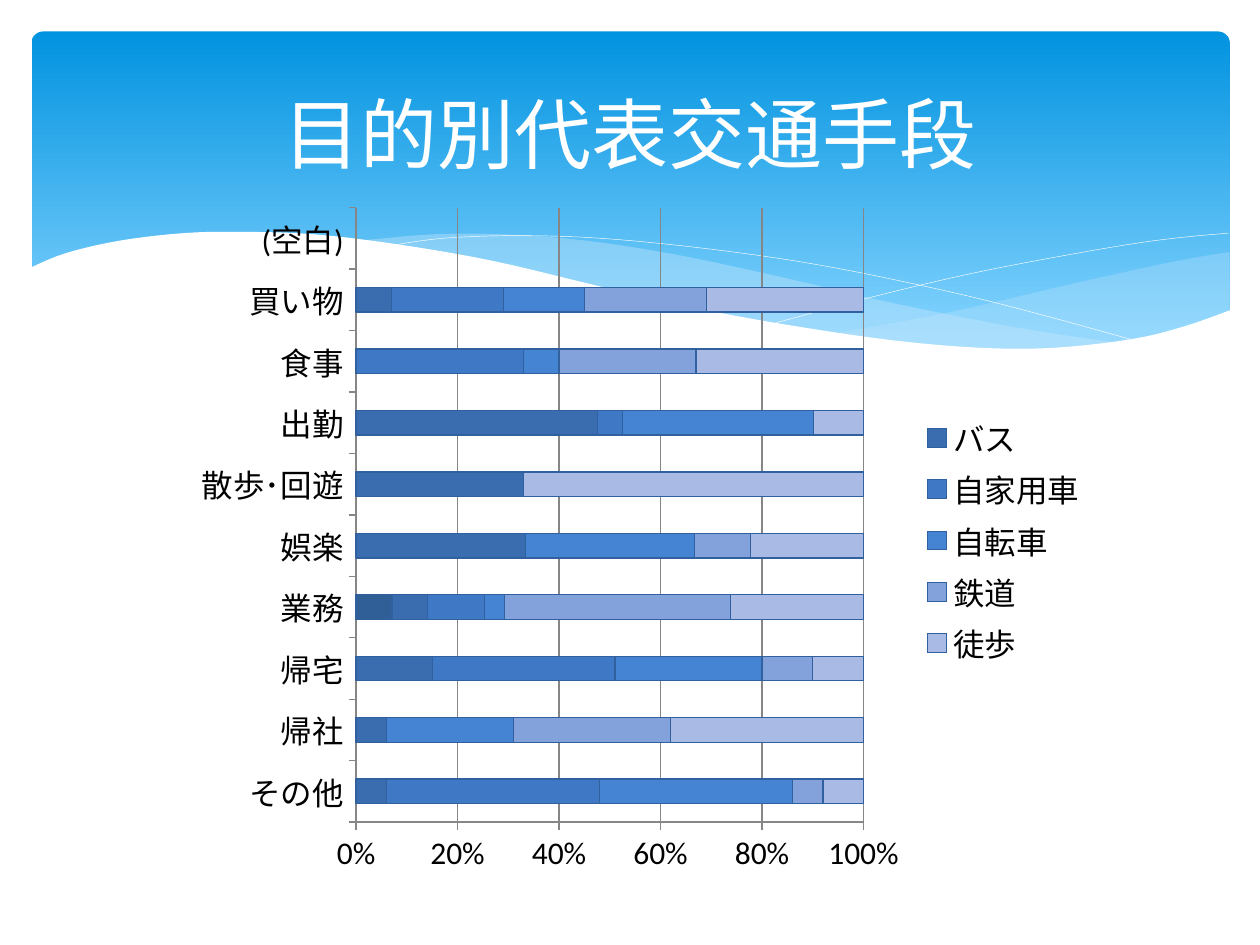
import dataclasses

import pptx
import pptx.chart.data
import pptx.dml.color
import pptx.enum.chart
import pptx.enum.dml
import pptx.enum.shapes
import pptx.enum.text
import pptx.oxml
import pptx.oxml.ns
import pptx.util
from pptx.util import Inches


@dataclasses.dataclass(frozen=True)
class Theme:
    font: str = "Calibri"
    title_size: int = 44
    chart_size: int = 18
    white: str = "FFFFFF"
    text: str = "000000"
    sky_top: str = "0293E0"
    sky_bottom: str = "83D3FE"
    swell: str = "C6E7FC"
    grid: str = "868686"
    bar_edge: str = "30619E"
    bars: tuple = ("305F98", "3A6CB0", "3F79C5", "4584D3", "83A1DA", "A9BBE4", "C8D2EC")


THEME = Theme()

WAVE_EDGE = [(0, .29), (.29, .17), (.72, .07), (1.23, .01), (1.7, 0), (2.27, .02),
             (2.93, .1), (3.68, .23), (4.52, .43), (5.32, .61), (6.03, .74),
             (6.85, .86), (7.55, .92), (8.14, .92), (8.76, .85), (9.17, .75), (9.54, .62)]
RIGHT_SWELL_TOP = [(9.53, .16), (9.12, .23), (8.38, .39), (7.3, .64), (6.38, .81)]
RIGHT_SWELL_BASE = [(6.38, .81), (6.96, .88), (7.46, .93), (8.01, .93), (8.58, .89),
                    (9.12, .78), (9.53, .63)]
LEFT_SWELL_TOP = [(8.7, .89), (7.84, .76), (6.83, .56), (6.06, .38), (5.18, .19),
                  (4.42, .07), (3.76, .02), (3.21, .02), (2.63, .07)]
LEFT_SWELL_BASE = [(2.63, .07), (3.39, .19), (4.26, .38), (5.43, .64), (6.27, .8),
                   (6.99, .9), (7.73, .94), (8.25, .93), (8.7, .89)]
FALLING_LINE = [(2.86, .11), (3.3, .05), (3.93, .03), (4.66, .06), (5.59, .16),
                (6.42, .29), (7.37, .49), (8.08, .67), (8.84, .88)]
RISING_LINE = [(5.9, .73), (6.72, .51), (7.53, .32), (8.43, .15), (9.01, .06), (9.52, .01)]

PURPOSES = ["その他", "帰社", "帰宅", "業務", "娯楽", "散歩･回遊", "出勤", "食事", "買い物", "(空白)"]
SHARES = {
    "Series 1": (None, None, None, 7, None, None, None, None, None, None),
    "バス": (6, 6, 15, 7, 33, 33, 48, None, 7, None),
    "自家用車": (42, None, 36, 11, None, None, 5, 33, 22, None),
    "自転車": (38, 25, 29, 4, 33, None, 38, 7, 16, None),
    "鉄道": (6, 31, 10, 44, 11, None, None, 27, 24, None),
    "徒歩": (8, 38, 10, 26, 22, 67, 10, 33, 31, None),
    "Series 7": (None,) * len(PURPOSES),
}
UNLISTED_SERIES = (0, 6)


def rgb(code):
    return pptx.dml.color.RGBColor.from_string(code)


def fill_solid(fill, code):
    fill.solid()
    fill.fore_color.rgb = rgb(code)


def smooth(knots, steps=5):
    ends = [knots[0], *knots, knots[-1]]
    points = [knots[0]]
    for a, b, c, d in zip(ends, ends[1:], ends[2:], ends[3:]):
        for step in range(1, steps + 1):
            t = step / steps
            points.append(tuple(
                (2 * q + (r - p) * t + (2 * p - 5 * q + 4 * r - s) * t ** 2
                 + (3 * q - p - 3 * r + s) * t ** 3) / 2
                for p, q, r, s in zip(a, b, c, d)))
    return points


def add_outline(page, box, points, closed):
    left, top = box[:2]
    places = [(left + Inches(x), top + Inches(y)) for x, y in points]
    builder = page.shapes.build_freeform(*places[0])
    builder.add_line_segments(places[1:], close=closed)
    shape = builder.convert_to_shape()
    shape.shadow.inherit = False
    return shape


def add_area(page, box, points, code, opacity=100):
    shape = add_outline(page, box, points, True)
    fill_solid(shape.fill, code)
    shape.line.fill.background()
    if opacity < 100:
        color = shape.element.spPr.find(".//" + pptx.oxml.ns.qn("a:srgbClr"))
        alpha = pptx.oxml.parse_xml(
            f'<a:alpha {pptx.oxml.ns.nsdecls("a")} val="{opacity * 1000}"/>')
        color.append(alpha)


def add_sky(page, box):
    sky = page.shapes.add_shape(pptx.enum.shapes.MSO_SHAPE.ROUNDED_RECTANGLE, *box)
    sky.adjustments[0] = 0.034
    sky.shadow.inherit = False
    sky.line.fill.background()
    sky.fill.gradient()
    sky.fill.gradient_angle = 270
    stops = ((0, THEME.sky_top), (0.9, THEME.sky_bottom))
    for stop, (position, code) in zip(sky.fill.gradient_stops, stops):
        stop.position = position
        stop.color.rgb = rgb(code)


def add_waves(page, box):
    add_area(page, box, smooth(RIGHT_SWELL_TOP) + smooth(RIGHT_SWELL_BASE), THEME.swell, 29)
    add_area(page, box, smooth(LEFT_SWELL_TOP) + smooth(LEFT_SWELL_BASE), THEME.swell, 40)
    for knots in (FALLING_LINE, RISING_LINE):
        curve = add_outline(page, box, smooth(knots), False)
        curve.fill.background()
        curve.line.color.rgb = rgb(THEME.white)
        curve.line.width = pptx.util.Pt(0.25)
    width, height = (length / Inches(1) for length in box[2:])
    add_area(page, box, smooth(WAVE_EDGE) + [(width, height), (0, height)], THEME.white)


def place_title(page, box, text):
    title = page.shapes.title
    page.shapes.element.append(title.element)
    title.left, title.top, title.width, title.height = box
    frame = title.text_frame
    frame.word_wrap = True
    frame.vertical_anchor = pptx.enum.text.MSO_ANCHOR.MIDDLE
    para = frame.paragraphs[0]
    para.alignment = pptx.enum.text.PP_ALIGN.CENTER
    span = para.add_run()
    span.text = text
    span.font.name = THEME.font
    span.font.size = pptx.util.Pt(THEME.title_size)
    span.font.color.rgb = rgb(THEME.white)


def set_layout(part, x, y, width, height, inner=False):
    target = '<c:layoutTarget val="inner"/>' if inner else ""
    sizes = "".join(f'<c:{key} val="{value}"/>'
                    for key, value in zip("xywh", (x, y, width, height)))
    layout = pptx.oxml.parse_xml(
        f'<c:layout {pptx.oxml.ns.nsdecls("c")}><c:manualLayout>{target}'
        f'<c:xMode val="edge"/><c:yMode val="edge"/>{sizes}</c:manualLayout></c:layout>')
    for old in part.findall(pptx.oxml.ns.qn("c:layout")):
        part.remove(old)
    entry = part.find(pptx.oxml.ns.qn("c:legendPos"))
    if entry is None:
        part.insert(0, layout)
    else:
        entry.addnext(layout)


def add_share_chart(page, box):
    data = pptx.chart.data.CategoryChartData()
    data.categories = PURPOSES
    for name, values in SHARES.items():
        data.add_series(name, values)
    kind = pptx.enum.chart.XL_CHART_TYPE.BAR_STACKED_100
    chart = page.shapes.add_chart(kind, *box, data).chart
    chart.has_title = False
    chart.font.name = THEME.font
    chart.font.size = pptx.util.Pt(THEME.chart_size)
    chart.font.color.rgb = rgb(THEME.text)

    plot = chart.plots[0]
    plot.gap_width, plot.overlap = 150, 100
    plot.vary_by_categories = False
    for series, code in zip(plot.series, THEME.bars):
        fill_solid(series.format.fill, code)
        series.format.line.color.rgb = rgb(THEME.bar_edge)
        series.format.line.width = pptx.util.Pt(0.75)

    values = chart.value_axis
    values.minimum_scale, values.maximum_scale, values.major_unit = 0, 1, 0.2
    values.has_major_gridlines = True
    values.tick_labels.number_format = "0%"
    values.tick_labels.number_format_is_linked = False
    for axis in (values, chart.category_axis):
        axis.major_tick_mark = pptx.enum.chart.XL_TICK_MARK.OUTSIDE
    for part in (values, chart.category_axis, values.major_gridlines):
        part.format.line.color.rgb = rgb(THEME.grid)
        part.format.line.width = pptx.util.Pt(0.75)

    chart.has_legend = True
    legend = chart.legend
    legend.position = pptx.enum.chart.XL_LEGEND_POSITION.RIGHT
    legend.include_in_layout = False
    area = chart.element.find(".//" + pptx.oxml.ns.qn("c:plotArea"))
    key = chart.element.find(".//" + pptx.oxml.ns.qn("c:legend"))
    set_layout(area, 0.188, 0.018, 0.554, 0.89, inner=True)
    set_layout(key, 0.8, 0.31, 0.19, 0.38)
    for index in reversed(UNLISTED_SERIES):
        hidden = pptx.oxml.parse_xml(
            f'<c:legendEntry {pptx.oxml.ns.nsdecls("c")}>'
            f'<c:idx val="{index}"/><c:delete val="1"/></c:legendEntry>')
        key.find(pptx.oxml.ns.qn("c:legendPos")).addnext(hidden)


def main():
    deck = pptx.Presentation()
    deck.slide_width, deck.slide_height = Inches(10), Inches(7.5)
    page = deck.slides.add_slide(deck.slide_layouts[5])
    add_sky(page, (Inches(0.25), Inches(0.25), Inches(9.51), Inches(2.7)))
    add_waves(page, (Inches(0.23), Inches(1.84), Inches(9.54), Inches(1.45)))
    place_title(page, (Inches(0.5), Inches(0.37), Inches(9), Inches(1.37)), "目的別代表交通手段")
    add_share_chart(page, (Inches(1.46), Inches(1.55), Inches(7.27), Inches(5.48)))
    deck.save("out.pptx")


if __name__ == "__main__":
    main()
